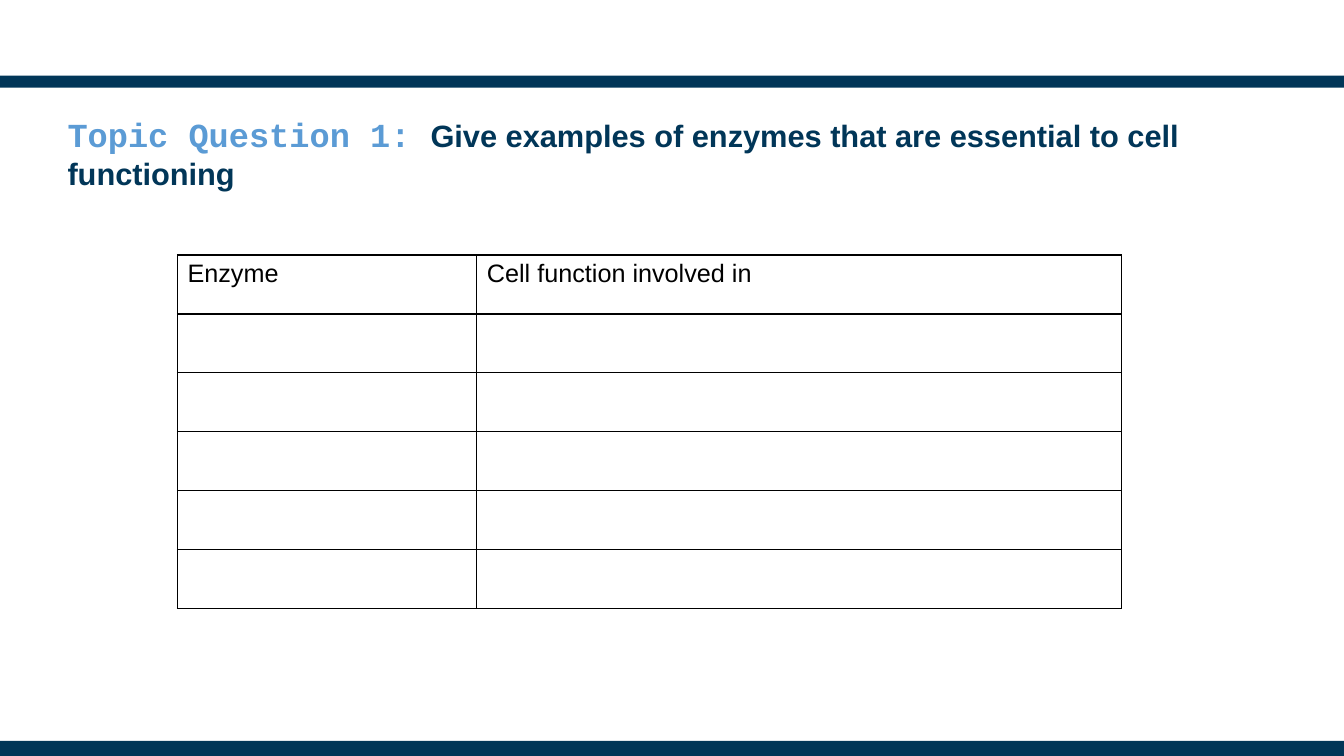
from dataclasses import dataclass

from lxml import etree
from pptx import Presentation
from pptx import util as u
from pptx.dml.color import RGBColor
from pptx.enum import shapes, text
from pptx.oxml.ns import qn


@dataclass(frozen=True)
class Theme:
    """Colours, fonts and type sizes of the slide."""
    navy: str = "013658"
    sky: str = "5B9BD5"
    ink: str = "000000"
    sans: str = "Arial"
    mono: str = "Courier New"
    label_size: int = 24
    title_size: int = 22
    body_size: int = 18
    border_width: int = 1


class Worksheet:
    """Draws the elements of a question page in one theme."""

    def __init__(self, page, theme):
        self.page = page
        self.theme = theme

    def add_span(self, para, words, color, **formats):
        """Add a run with the given font values."""
        span = para.add_run()
        span.text = words
        for name, value in formats.items():
            setattr(span.font, name, value)
        span.font.color.rgb = RGBColor.from_string(color)

    def band(self, top, height):
        """Add a full-width navy band."""
        band = self.page.shapes.add_shape(
            shapes.MSO_SHAPE.RECTANGLE, 0, u.Inches(top), u.Inches(13.33), u.Inches(height))
        band.shadow.inherit = False
        band.fill.solid()
        band.fill.fore_color.rgb = RGBColor.from_string(self.theme.navy)
        band.line.fill.background()

    def title(self, label, question, left, top, width, height):
        """Add the question with its label in front."""
        box = self.page.shapes.add_textbox(*map(u.Inches, (left, top, width, height)))
        frame = box.text_frame
        settings = {"word_wrap": True, "vertical_anchor": text.MSO_ANCHOR.TOP,
                    "margin_left": 0, "margin_top": 0, "margin_right": 0, "margin_bottom": 0}
        for name, value in settings.items():
            setattr(frame, name, value)
        para = frame.paragraphs[0]
        theme = self.theme
        self.add_span(para, label, theme.sky, name=theme.mono,
                      size=u.Pt(theme.label_size), bold=True)
        self.add_span(para, question, theme.navy, name=theme.sans,
                      size=u.Pt(theme.title_size), bold=True)

    def border(self, cell):
        """Outline a cell on all four sides."""
        properties = cell._tc.get_or_add_tcPr()
        for position, side in enumerate(("lnL", "lnR", "lnT", "lnB")):
            line = etree.Element(qn(f"a:{side}"), w=str(u.Pt(self.theme.border_width)))
            fill = etree.SubElement(line, qn("a:solidFill"))
            etree.SubElement(fill, qn("a:srgbClr"), val=self.theme.ink)
            properties.insert(position, line)

    def answer_table(self, headings, row_count, left, top, widths, height):
        """Add a bordered table with headings and empty answer rows."""
        table = self.page.shapes.add_table(
            row_count, len(headings), u.Inches(left), u.Inches(top),
            u.Inches(sum(widths)), u.Inches(height)).table
        table.first_row = table.horz_banding = False
        for column, width in zip(table.columns, widths):
            column.width = u.Inches(width)
        for cell in table.iter_cells():
            cell.fill.background()
            self.border(cell)
        for column, heading in enumerate(headings):
            self.add_span(table.cell(0, column).text_frame.paragraphs[0], heading,
                          self.theme.ink, name=self.theme.sans,
                          size=u.Pt(self.theme.body_size))


def main():
    """Build and save the enzyme question page."""
    deck = Presentation()
    deck.slide_width, deck.slide_height = u.Inches(13.33), u.Inches(7.5)
    sheet = Worksheet(deck.slides.add_slide(deck.slide_layouts[6]), Theme())
    sheet.band(0.75, 0.12)
    sheet.band(7.35, 0.15)
    sheet.title("Topic Question 1: ",
                "Give examples of enzymes that are essential to cell functioning",
                0.67, 1.13, 12, 0.75)
    sheet.answer_table(("Enzyme", "Cell function involved in"), 6,
                       1.76, 2.53, (2.97, 6.39), 3.51)
    deck.save("out.pptx")


if __name__ == "__main__":
    main()
